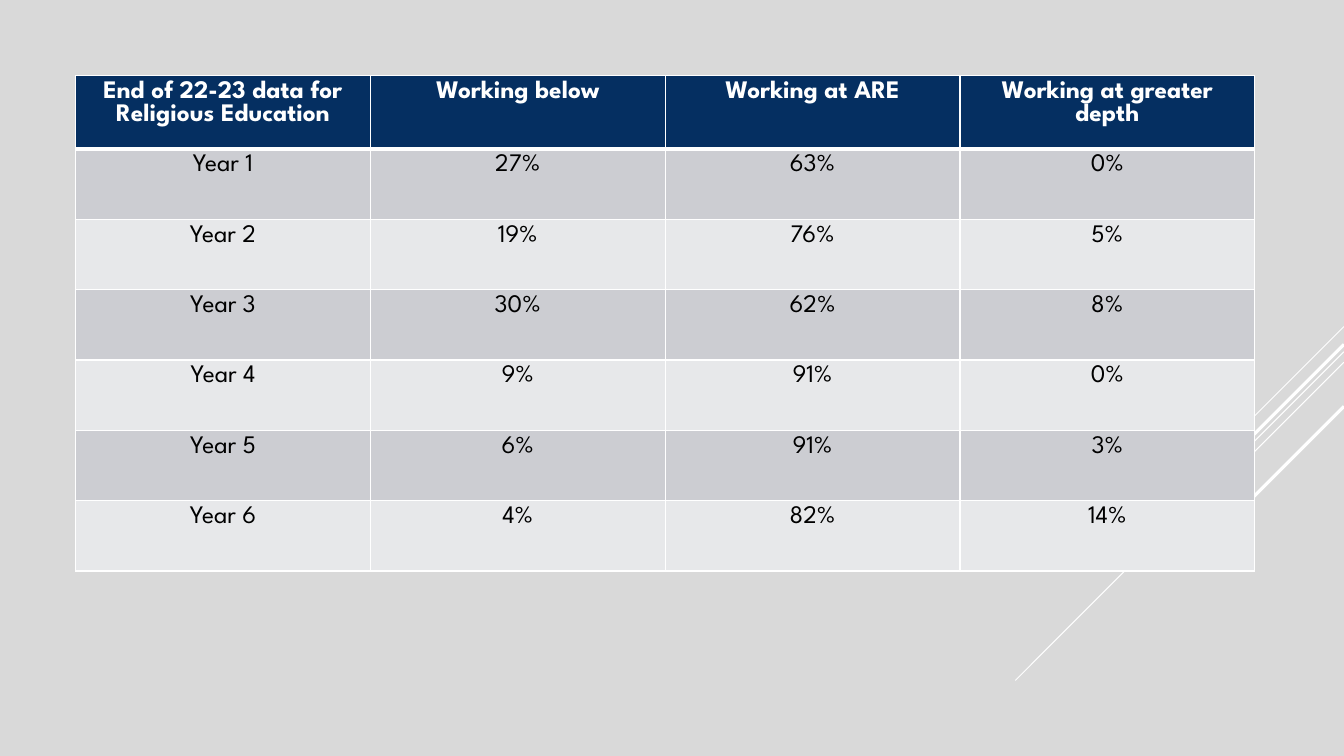
from dataclasses import dataclass

from lxml import etree
from pptx import Presentation
from pptx.dml.color import RGBColor
from pptx.enum import shapes, text
from pptx.oxml.ns import qn
from pptx.util import Pt

PX = 9525  # EMU in one px
WIDE, HIGH = 1280, 720


@dataclass(frozen=True)
class Theme:
    back: str = "D9D9D9"
    navy: str = "052F61"
    bands: tuple = ("CCCDD2", "E7E8EA")
    white: str = "FFFFFF"
    black: str = "000000"
    font: str = "League Spartan"
    size: int = 18
    thin: float = 0.75
    bold: float = 2.25
    grid: int = 1
    rule: int = 3


THEME = Theme()

HEADS = ("End of 22-23 data for Religious Education", "Working below",
         "Working at ARE", "Working at greater depth")
YEARS = ((27, 63, 0), (19, 76, 5), (30, 62, 8), (9, 91, 0), (6, 91, 3), (4, 82, 14))

# Start below the top of the slide, length across, weight
RAYS = ((311, 96, THEME.thin), (335, 313, THEME.thin), (345, 199, THEME.thin),
        (328, 183, THEME.bold), (387, 133, THEME.bold))


def color(code):
    return RGBColor.from_string(code)


def add_rays(slide, x, y):
    """Draw 45-degree lines falling to the left from the edge at x."""
    for drop, run, weight in RAYS:
        top = y + drop
        ray = slide.shapes.add_connector(
            shapes.MSO_CONNECTOR.STRAIGHT,
            x * PX, top * PX, (x - run) * PX, (top + run) * PX)
        ray.line.color.rgb = color(THEME.white)
        ray.line.width = Pt(weight)
        etree.SubElement(ray._element.spPr, qn("a:effectLst"))


def set_edges(cell, edges):
    """Give the cell white borders, from a map of side to points."""
    props = cell._tc.get_or_add_tcPr()
    for spot, (side, weight) in enumerate(edges.items()):
        edge = etree.Element(qn(f"a:ln{side}"), w=str(Pt(weight)))
        fill = etree.SubElement(edge, qn("a:solidFill"))
        etree.SubElement(fill, qn("a:srgbClr"), val=THEME.white)
        props.insert(spot, edge)


def style_cell(cell, words, row):
    head = row == 0
    cell.text = words
    cell.fill.solid()
    cell.fill.fore_color.rgb = color(THEME.navy if head else THEME.bands[(row - 1) % 2])
    para = cell.text_frame.paragraphs[0]
    para.alignment = text.PP_ALIGN.CENTER
    para.font.name = THEME.font
    para.font.size = Pt(THEME.size)
    para.font.bold = head
    para.font.color.rgb = color(THEME.white if head else THEME.black)
    edges = {"L": THEME.grid, "R": THEME.grid}
    if row != 1:  # the heavy rule of the header is the top of this row
        edges["T"] = THEME.grid
    edges["B"] = THEME.rule if head else THEME.grid
    set_edges(cell, edges)


def add_results(slide, x, y, wide, high):
    rows = [HEADS] + [(f"Year {n}", *(f"{v}%" for v in vals))
                      for n, vals in enumerate(YEARS, 1)]
    frame = slide.shapes.add_table(len(rows), len(HEADS),
                                   x * PX, y * PX, wide * PX, high * PX)
    table = frame.table
    for col in table.columns:
        col.width = wide * PX // len(HEADS)
    step = high // len(rows)
    for line in table.rows:
        line.height = step * PX
    table.rows[0].height = (high - step * len(YEARS)) * PX
    for r, words in enumerate(rows):
        for c, word in enumerate(words):
            style_cell(table.cell(r, c), word, r)


def main():
    deck = Presentation()
    deck.slide_width, deck.slide_height = WIDE * PX, HIGH * PX
    slide = deck.slides.add_slide(deck.slide_layouts[6])
    slide.background.fill.solid()
    slide.background.fill.fore_color.rgb = color(THEME.back)
    add_rays(slide, WIDE, 0)
    add_results(slide, 72, 72, 1123, 472)
    deck.save("out.pptx")


if __name__ == "__main__":
    main()
